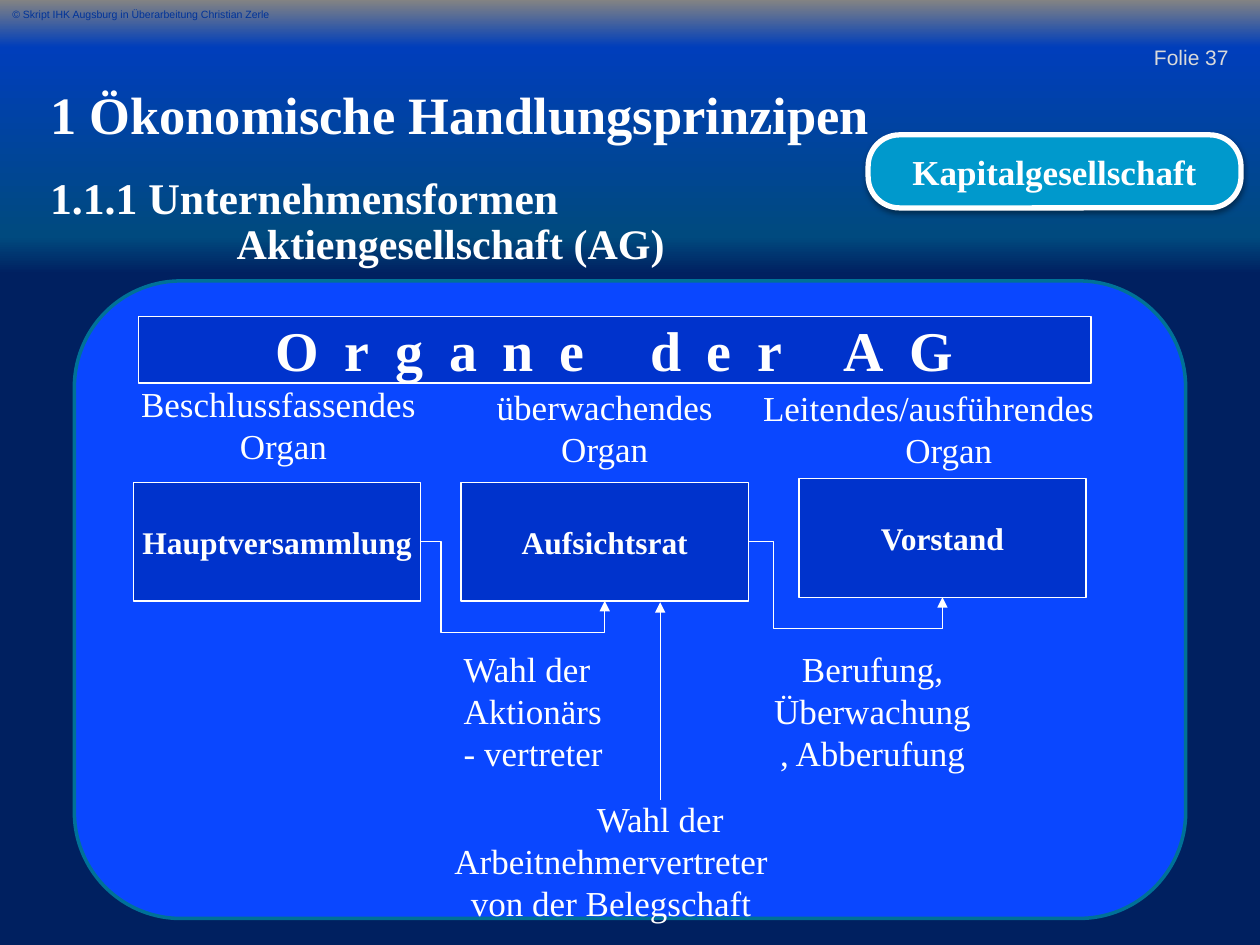
from lxml import etree
from pptx import Presentation
from pptx.dml.color import RGBColor
from pptx.enum.shapes import MSO_CONNECTOR, MSO_SHAPE
from pptx.enum.text import MSO_ANCHOR, PP_ALIGN
from pptx.oxml.ns import qn
from pptx.util import Inches, Pt

RECTANGLE, ROUNDED = MSO_SHAPE.RECTANGLE, MSO_SHAPE.ROUNDED_RECTANGLE
STRAIGHT, ELBOW = MSO_CONNECTOR.STRAIGHT, MSO_CONNECTOR.ELBOW
LEFT, CENTER, RIGHT = PP_ALIGN.LEFT, PP_ALIGN.CENTER, PP_ALIGN.RIGHT
TOP, MIDDLE, BOTTOM = MSO_ANCHOR.TOP, MSO_ANCHOR.MIDDLE, MSO_ANCHOR.BOTTOM
SERIF, SANS = "Times New Roman", "Arial"
WHITE, BOX_BLUE = "FFFFFF", "0033CC"
BACKGROUND_STOPS = [(0, "838383"), (5, "003EBB"), (25, "004A7F"), (29, "002060")]


def color(value):
    """Turn a hex string into a colour."""
    return RGBColor.from_string(value)


def add_child(parent, tag, **attributes):
    """Append a drawing element with the given attributes."""
    child = etree.SubElement(parent, qn(tag))
    for name, value in attributes.items():
        child.set(name, str(value))
    return child


def set_background(slide):
    """Fill the background with a vertical gradient."""
    fill = slide.background.fill
    fill.gradient()
    fill.gradient_angle = 270
    stop_list = next(slide.element.iter(qn("a:gsLst")))
    for stop in list(stop_list):
        stop_list.remove(stop)
    for percent, value in BACKGROUND_STOPS:
        stop = add_child(stop_list, "a:gs", pos=percent * 1000)
        add_child(stop, "a:srgbClr", val=value)


def style(paragraph, size, bold=False, value=WHITE, name=SERIF, align=LEFT):
    """Set font and alignment of a paragraph."""
    paragraph.alignment = align
    font = paragraph.font
    font.name, font.size, font.bold = name, Pt(size), bold
    font.color.rgb = color(value)


def add_text(slide, box, text, size, anchor=TOP, **look):
    """Add a wrapped text box with one paragraph and return its frame."""
    frame = slide.shapes.add_textbox(*map(Inches, box)).text_frame
    frame.word_wrap = True
    frame.vertical_anchor = anchor
    frame.text = text
    style(frame.paragraphs[0], size, **look)
    return frame


def add_caption(slide, box, lines, align=CENTER):
    """Add caption lines, each given with its shift off the centre."""
    frame = slide.shapes.add_textbox(*map(Inches, box)).text_frame
    frame.word_wrap = True
    frame.margin_left = frame.margin_right = Inches(0.05)
    for index, (text, shift) in enumerate(lines):
        paragraph = frame.paragraphs[0] if index == 0 else frame.add_paragraph()
        paragraph.text = text
        style(paragraph, 20, align=align)
        paragraph.line_spacing = Pt(24)
        if shift:
            side = "marL" if shift > 0 else "marR"
            properties = paragraph._p.get_or_add_pPr()
            properties.set(side, str(Inches(2 * abs(shift))))


def add_box(slide, kind, box, fill, line, width, text="", size=18):
    """Add a filled, outlined shape with optional bold centred text."""
    shape = slide.shapes.add_shape(kind, *map(Inches, box))
    shape.shadow.inherit = False
    shape.fill.solid()
    shape.fill.fore_color.rgb = color(fill)
    shape.line.color.rgb = color(line)
    shape.line.width = Pt(width)
    if text:
        frame = shape.text_frame
        frame.word_wrap = False
        frame.vertical_anchor = MIDDLE
        frame.text = text
        style(frame.paragraphs[0], size, bold=True, align=CENTER)
    return shape


def add_shadow(shape):
    """Give a shape a soft shadow below."""
    effects = shape.element.spPr.find(qn("a:effectLst"))
    shadow = add_child(effects, "a:outerShdw", blurRad=Pt(3.1), dist=Pt(1.6),
                       dir=5400000, rotWithShape=0)
    add_child(add_child(shadow, "a:srgbClr", val="000000"), "a:alpha", val=38000)


def add_arrow(slide, kind, start, end):
    """Add a thin white connector with an arrowhead at its end."""
    connector = slide.shapes.add_connector(kind, *map(Inches, start + end))
    connector.line.color.rgb = color(WHITE)
    connector.line.width = Pt(0.75)
    properties = connector._element.spPr
    add_child(properties.find(qn("a:ln")), "a:tailEnd", type="triangle")
    add_child(properties, "a:effectLst")
    return connector


def add_bent_arrow(slide, source, target, adjustments):
    """Lead an arrow from a box's right side round to another's bottom."""
    connector = add_arrow(slide, ELBOW, (0, 0), (1, 1))
    connector.begin_connect(source, 3)
    connector.end_connect(target, 2)
    geometry = connector._element.spPr.find(qn("a:prstGeom"))
    geometry.set("prst", "bentConnector4")
    guides = geometry.find(qn("a:avLst"))
    for number, ratio in enumerate(adjustments, 1):
        add_child(guides, "a:gd", name=f"adj{number}",
                  fmla=f"val {round(ratio * 100000)}")


def add_headings(slide):
    """Add the slide number, copyright line and headings."""
    add_text(slide, (7.52, 0.21, 2.33, 0.39), "Folie 37", 12, BOTTOM,
             value="DADADA", name=SANS, align=RIGHT)
    add_text(slide, (0, 0, 3, 0.21),
             "© Skript IHK Augsburg in Überarbeitung Christian Zerle", 6, BOTTOM,
             value="003399", name=SANS)
    frame = add_text(slide, (0.3, 0.6, 9, 1.2),
                     "1 Ökonomische Handlungsprinzipen", 30, bold=True)
    section = frame.add_paragraph()
    section.text = "1.1.1 Unternehmensformen"
    style(section, 25, bold=True)
    section.space_before = Pt(15)
    add_text(slide, (1.78, 1.68, 6.26, 0.5), "Aktiengesellschaft (AG)", 24, bold=True)
    badge = add_box(slide, ROUNDED, (6.89, 1.07, 2.96, 0.58), "0099CC", WHITE, 3,
                    "Kapitalgesellschaft", 20)
    badge.adjustments[0] = 0.43
    add_shadow(badge)


def add_organs(slide):
    """Add the panel with the three organs and their relations."""
    add_box(slide, ROUNDED, (0.59, 2.23, 8.82, 5.06), "0A47FF", "007197", 2)
    banner = add_box(slide, RECTANGLE, (1.1, 2.51, 7.56, 0.53), BOX_BLUE, WHITE,
                     0.75, "Organe der AG", 32)
    run = banner.text_frame.paragraphs[0].runs[0]
    run._r.get_or_add_rPr().set("spc", "1470")

    organs = [("Hauptversammlung", 1.06, 3.83), ("Aufsichtsrat", 3.66, 3.83),
              ("Vorstand", 6.34, 3.8)]
    assembly, supervisors, directors = [
        add_box(slide, RECTANGLE, (left, top, 2.28, 0.94), BOX_BLUE, WHITE, 0.75, name)
        for name, left, top in organs]

    add_caption(slide, (1.02, 2.99, 2.6, 0.77),
                [("Beschlussfassendes", -0.11), ("Organ", 0.04)])
    add_caption(slide, (3.62, 3.01, 2.36, 0.77), [("überwachendes", 0), ("Organ", 0)])
    add_caption(slide, (5.95, 3.02, 2.84, 0.77),
                [("Leitendes/ausführendes", 0), ("Organ", 0.16)])

    add_bent_arrow(slide, supervisors, directors, (0.13, 1.57))
    add_bent_arrow(slide, assembly, supervisors, (0.11, 1.53))
    add_arrow(slide, STRAIGHT, (5.24, 6.35), (5.24, 4.78))

    add_caption(slide, (3.63, 5.09, 1.34, 1.1),
                [("Wahl der", 0), ("Aktionärs", 0), ("- vertreter", 0)], LEFT)
    add_caption(slide, (6.02, 5.09, 1.81, 1.1),
                [("Berufung,", 0), ("Überwachung", 0), (", Abberufung", 0)])
    add_caption(slide, (3.39, 6.28, 3.7, 1.1),
                [("Wahl der", 0), ("Arbeitnehmervertreter", -0.39),
                 ("von der Belegschaft", 0)])


def main():
    """Build and save the slide."""
    presentation = Presentation()
    presentation.slide_width, presentation.slide_height = Inches(10), Inches(7.5)
    slide = presentation.slides.add_slide(presentation.slide_layouts[6])
    set_background(slide)
    add_organs(slide)
    add_headings(slide)
    presentation.save("out.pptx")


if __name__ == "__main__":
    main()
